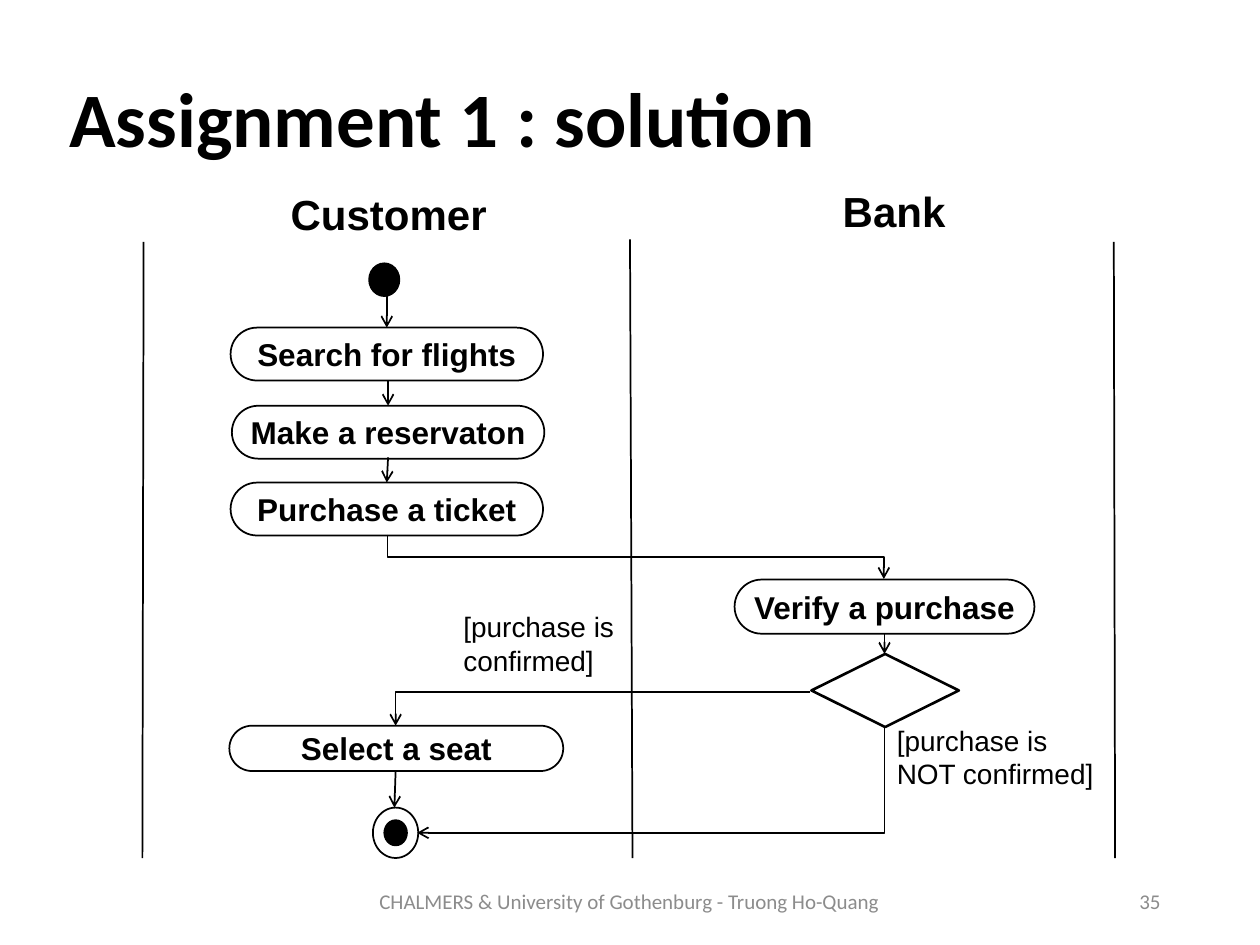
from lxml import etree
from pptx import Presentation, util as u
from pptx.dml.color import RGBColor
from pptx.enum import shapes as s, text as t
from pptx.oxml.ns import qn

INK = {"black": "000000", "white": "FFFFFF", "grey": "8C8C8C"}
ALIGN = {"l": t.PP_ALIGN.LEFT, "c": t.PP_ALIGN.CENTER, "r": t.PP_ALIGN.RIGHT}

deck = Presentation()
deck.slide_width, deck.slide_height = u.Inches(10), u.Inches(7.5)
CELL = deck.slide_width / 100  # grid of 100 columns by 75 rows
slide = deck.slides.add_slide(deck.slide_layouts[5])


def grid(*cells):
    return [round(c * CELL) for c in cells]


def write(shape, words, size=18, font="Arial", ink="black", bold=False,
          align="l", mid=True, wrap=True, space=1.0):
    frame = shape.text_frame
    frame.word_wrap = wrap
    frame.auto_size = t.MSO_AUTO_SIZE.NONE
    frame.vertical_anchor = t.MSO_ANCHOR.MIDDLE if mid else t.MSO_ANCHOR.TOP
    para = frame.paragraphs[0]
    para.alignment, para.line_spacing = ALIGN[align], space
    run = para.add_run()
    run.text = words
    run.font.size, run.font.name, run.font.bold = u.Pt(size), font, bold
    run.font.color.rgb = RGBColor.from_string(INK[ink])


# Title
title = slide.shapes.title
title.left, title.top, title.width, title.height = grid(4.5, 2.5, 91.1, 14.5)
write(title, "Assignment 1 : solution", size=44, font="Calibri", bold=True, space=0.9)

# Footer, lane heads and guard labels
foot = dict(size=12, font="Calibri", ink="grey")
head = dict(size=24, bold=True, mid=False, wrap=False)
guard = dict(size=16, mid=False)
for words, box, style in [
    ("CHALMERS & University of Gothenburg - Truong Ho-Quang",
     (27.2, 69.5, 45.5, 4), dict(foot, align="c")),
    ("35", (70.6, 69.5, 22.5, 4), dict(foot, align="r")),
    ("Customer", (22, 14.5, 17.7, 5), dict(head, align="c")),
    ("Bank", (65.9, 14.2, 10.3, 5), head),
    ("[purchase is confirmed]", (35.8, 47.9, 17.7, 6.4), guard),
    ("[purchase is NOT confirmed]", (70.2, 56.9, 18.3, 6.4), guard),
]:
    write(slide.shapes.add_textbox(*grid(*box)), words, **style)

# Actions, decision, start and end nodes
KIND = s.MSO_SHAPE
PILL, DOT = KIND.ROUNDED_RECTANGLE, KIND.OVAL
for kind, box, fill, words in [
    (PILL, (18.3, 26, 24.8, 4.2), "white", "Search for flights"),
    (PILL, (18.4, 32.2, 24.8, 4.2), "white", "Make a reservaton"),
    (PILL, (18.3, 38.3, 24.8, 4.2), "white", "Purchase a ticket"),
    (PILL, (58.3, 46, 23.8, 4.3), "white", "Verify a purchase"),
    (PILL, (18.2, 57.6, 26.5, 3.6), "white", "Select a seat"),
    (KIND.DIAMOND, (64.4, 51.9, 11.7, 5.8), "white", ""),
    (DOT, (29.3, 20.9, 2.4, 2.6), "black", ""),
    (DOT, (29.6, 64.1, 3.6, 4), "white", ""),
    (DOT, (30.5, 65.1, 1.8, 2), "black", ""),
]:
    node = slide.shapes.add_shape(kind, *grid(*box))
    node.shadow.inherit = False
    node.fill.solid()
    node.fill.fore_color.rgb = RGBColor.from_string(INK[fill])
    node.line.color.rgb = RGBColor.from_string(INK["black"])
    node.line.width = u.Pt(1.5 if kind == KIND.DIAMOND else 1)
    if kind == PILL:
        node.adjustments[0] = 0.5
        write(node, words, bold=True, align="c", wrap=False)

# Lane borders, straight flows, then bent flows (unturned corners, shape, turn)
lanes = [(11.4, 19.2, 11.3, 68.1), (50, 19, 50.2, 68.1), (88.4, 19.2, 88.5, 68.1)]
flows = [
    (30.7, 23.5, 30.7, 26), (30.8, 30.2, 30.8, 32.2), (30.8, 36.3, 30.7, 38.3),
    (70.2, 50.3, 70.2, 51.9), (31.4, 61.2, 31.3, 64.1),
]
bends = [
    ((48.7, 24.5, 52.2, 63.9), "bentConnector3", {"rot": 270, "flipH": 1}),
    ((31.4, 54.9, 64.3, 57.6), "bentConnector2", {"rot": 180, "flipV": 1}),
    ((47.5, 43.4, 55.8, 80.5), "bentConnector2", {"rot": 90}),
]
plain = [(ends, "line", {}) for ends in lanes + flows]
for ends, form, turn in plain + bends:
    kind = s.MSO_CONNECTOR.STRAIGHT if form == "line" else s.MSO_CONNECTOR.ELBOW
    link = slide.shapes.add_connector(kind, *grid(*ends))
    link.line.color.rgb = RGBColor.from_string(INK["black"])
    link.line.width = u.Pt(1)
    props = link._element.spPr
    props.find(qn("a:prstGeom")).set("prst", form)
    for key, val in turn.items():
        props.find(qn("a:xfrm")).set(key, str(val * 60000 if key == "rot" else val))
    if ends not in lanes:
        etree.SubElement(props.find(qn("a:ln")), qn("a:tailEnd"), type="arrow")
    etree.SubElement(props, qn("a:effectLst"))

deck.save("out.pptx")
